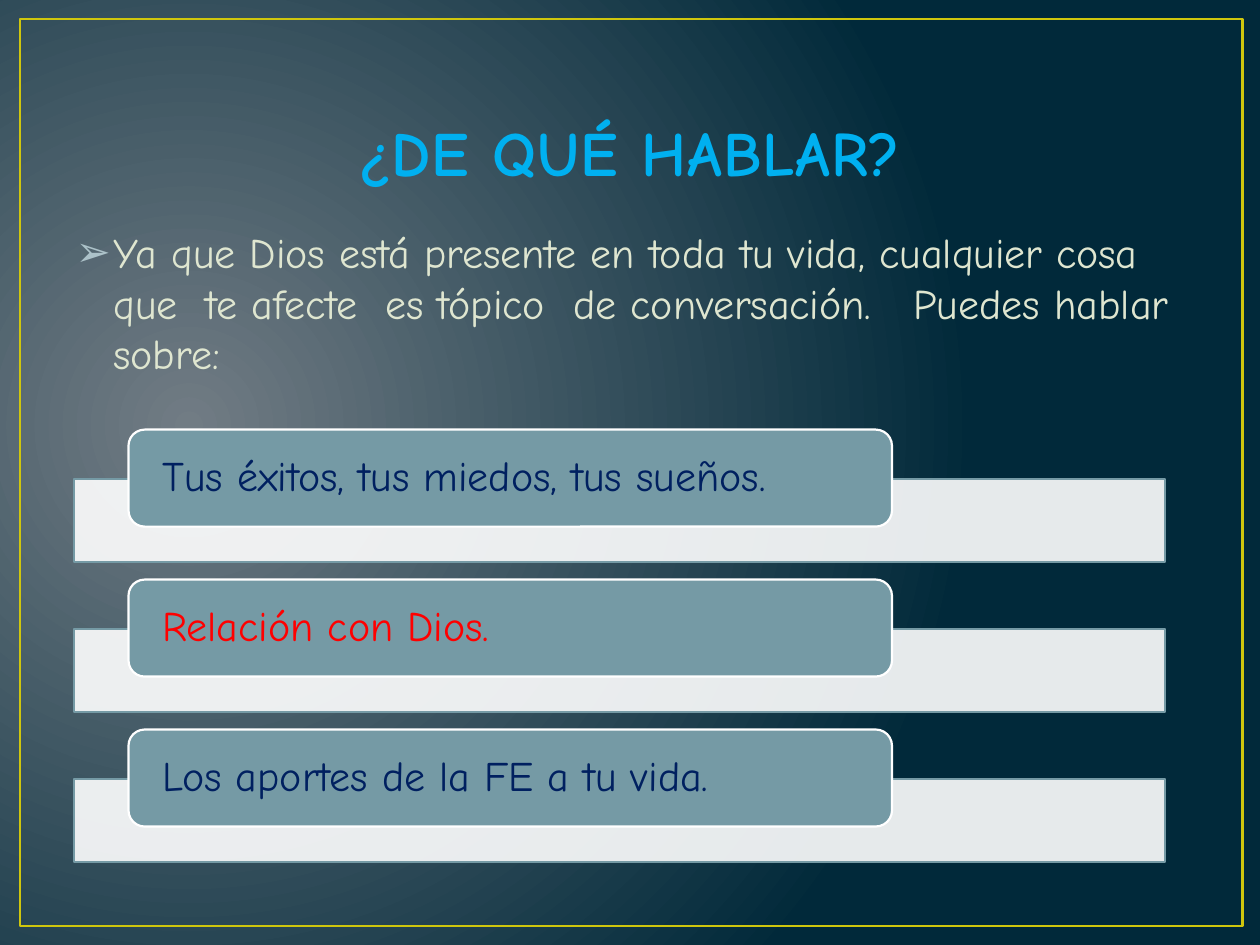
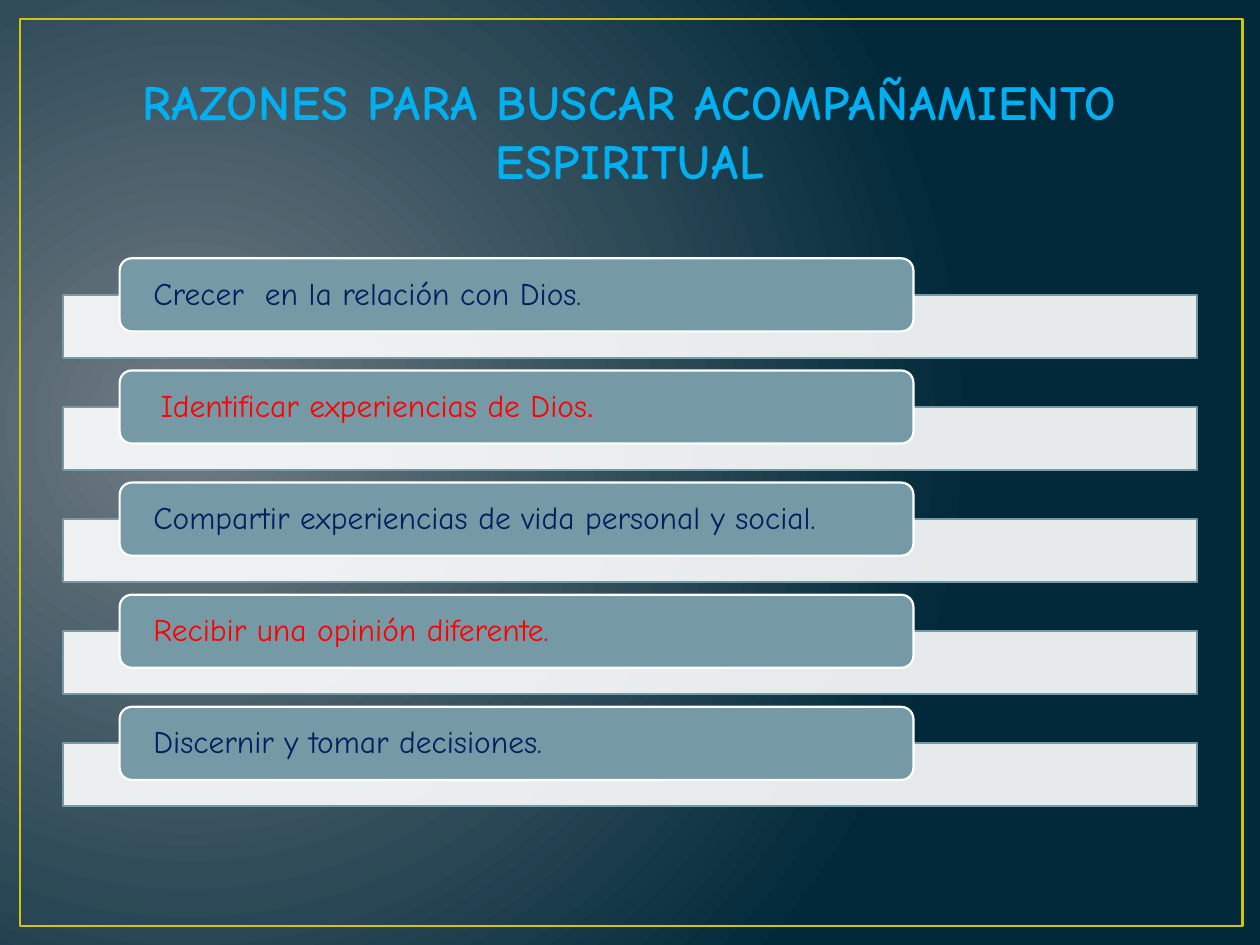
from lxml import etree
from pptx import Presentation
from pptx.dml.color import RGBColor
from pptx.enum.shapes import MSO_SHAPE
from pptx.enum.text import MSO_ANCHOR, MSO_AUTO_SIZE, PP_ALIGN
from pptx.oxml import parse_xml
from pptx.oxml.ns import nsdecls, qn
from pptx.util import Inches, Pt

RECTANGLE, ROUNDED = MSO_SHAPE.RECTANGLE, MSO_SHAPE.ROUNDED_RECTANGLE
MIDDLE, BOTTOM = MSO_ANCHOR.MIDDLE, MSO_ANCHOR.BOTTOM
LEFT, CENTER = PP_ALIGN.LEFT, PP_ALIGN.CENTER
NO_AUTOFIT = MSO_AUTO_SIZE.NONE

FONT, ALT_FONT = "Comic Neue", "Cabin"
GLOW, NIGHT, GOLD = "717C84", "01293A", "CFC60D"
SKY, TITLE_EDGE = "00B0F0", "384F55"
CREAM, BULLET = "DFE6D0", "ACC2C9"
STEEL, WHITE, NAVY, RED = "759AA5", "FFFFFF", "002060", "FF0000"

# Each topic is a list of spans: (text, font, colour).
PAGES = [
    {
        "title": "¿DE QUÉ HABLAR?", "title_size": 36,
        "intro": "Ya que Dios está presente en toda tu vida, cualquier cosa que  te afecte  "
                 "es tópico  de conversación.   Puedes hablar sobre:",
        "topics": [
            [("Tus éxitos, tus miedos, tus sueños.", FONT, NAVY)],
            [("Relación con Dios.", FONT, RED)],
            [("Los aportes de la FE a tu vida.", FONT, NAVY)],
        ],
        "list": {"top": 3.41, "pitch": 1.19, "size": 24, "inset": 0.23,
                 "tab": (1.02, 6.06, 0.77), "bar": (0.59, 8.66, 0.66), "bar_drop": 0.39},
    },
    {
        "title": "RAZONES PARA BUSCAR ACOMPAÑAMIENTO ESPIRITUAL", "title_size": 28,
        "intro": None,
        "topics": [
            [("Crecer  en la relación con Dios.", FONT, NAVY)],
            [(" ", ALT_FONT, WHITE), ("Identificar experiencias de Dios", FONT, RED),
             (".", ALT_FONT, RED)],
            [("Compartir experiencias de vida personal y social.", FONT, NAVY)],
            [("Recibir una opinión diferente.", FONT, RED)],
            [("Discernir y tomar decisiones.", FONT, NAVY)],
        ],
        "list": {"top": 2.05, "pitch": 0.89, "size": 18, "inset": 0.24,
                 "tab": (0.95, 6.3, 0.58), "bar": (0.5, 9, 0.5), "bar_drop": 0.29},
    },
]


def color(value):
    return RGBColor.from_string(value)


def place(shape, left, top, width, height):
    shape.left, shape.top = Inches(left), Inches(top)
    shape.width, shape.height = Inches(width), Inches(height)


def style_span(span, size, font, ink):
    span.font.size = Pt(size)
    span.font.name = font
    span.font.color.rgb = color(ink)


def add_panel(page, kind, box, fill, line, line_width):
    panel = page.shapes.add_shape(kind, *map(Inches, box))
    panel.shadow.inherit = False
    if fill:
        panel.fill.solid()
        panel.fill.fore_color.rgb = color(fill)
    else:
        panel.fill.background()
    panel.line.color.rgb = color(line)
    panel.line.width = Pt(line_width)
    return panel


def set_master_background(master):
    master.background.fill.gradient()
    gradient = next(master.element.iter(qn("a:gradFill")))
    glow = parse_xml(
        f'<a:gradFill {nsdecls("a")} rotWithShape="1"><a:gsLst>'
        f'<a:gs pos="0"><a:srgbClr val="{GLOW}"/></a:gs>'
        f'<a:gs pos="100000"><a:srgbClr val="{NIGHT}"/></a:gs></a:gsLst>'
        '<a:path path="circle"><a:fillToRect l="15000" t="50000" r="85000" b="60000"/>'
        '</a:path></a:gradFill>')
    gradient.getparent().replace(gradient, glow)


def move_to_master(shape, master):
    """Put the shape behind everything else on the master."""
    master.shapes.element.insert(2, shape.element)


def write_title(page, text, size):
    title = page.shapes.title
    place(title, 0.5, 0.3, 9, 1.25)
    frame = title.text_frame
    frame.text = text
    frame.word_wrap = True
    frame.auto_size = NO_AUTOFIT
    frame.vertical_anchor = BOTTOM
    para = frame.paragraphs[0]
    para.alignment = CENTER
    span = para.runs[0]
    style_span(span, size, FONT, SKY)
    span.font.bold = True
    properties = span.font._element if hasattr(span.font, "_element") else span._r.get_or_add_rPr()
    properties.set("spc", "50")
    properties.insert(0, parse_xml(
        f'<a:ln {nsdecls("a")} w="13335"><a:solidFill><a:srgbClr val="{TITLE_EDGE}"/>'
        '</a:solidFill></a:ln>'))


def write_intro(page, text):
    body = page.placeholders[1]
    place(body, 0.5, 1.75, 9, 4.95)
    frame = body.text_frame
    frame.text = text
    frame.auto_size = NO_AUTOFIT
    para = frame.paragraphs[0]
    properties = para._p.get_or_add_pPr()
    properties.set("marL", str(Inches(0.3)))
    properties.set("indent", str(-Inches(0.3)))
    bullet_color = etree.SubElement(properties, qn("a:buClr"))
    etree.SubElement(bullet_color, qn("a:srgbClr"), val=BULLET)
    etree.SubElement(properties, qn("a:buChar"), char="➢")
    para.space_before = Pt(0)
    style_span(para.runs[0], 24, FONT, CREAM)


def add_topics(page, topics, layout):
    tab_left, tab_width, tab_height = layout["tab"]
    bar_left, bar_width, bar_height = layout["bar"]
    for index, spans in enumerate(topics):
        top = layout["top"] + index * layout["pitch"]
        bar = add_panel(page, RECTANGLE,
                        (bar_left, top + layout["bar_drop"], bar_width, bar_height),
                        WHITE, STEEL, 1.25)
        bar_color = next(bar.element.spPr.iter(qn("a:srgbClr")))
        etree.SubElement(bar_color, qn("a:alpha"), val="90000")

        tab = add_panel(page, ROUNDED, (tab_left, top, tab_width, tab_height),
                        STEEL, WHITE, 1.25)
        frame = tab.text_frame
        frame.word_wrap = True
        frame.vertical_anchor = MIDDLE
        frame.margin_left = frame.margin_right = Inches(layout["inset"])
        frame.margin_top = frame.margin_bottom = 0
        para = frame.paragraphs[0]
        para.alignment = LEFT
        para.line_spacing = 0.9
        for text, font, ink in spans:
            span = para.add_run()
            span.text = text
            style_span(span, layout["size"], font, ink)


def main():
    deck = Presentation()
    deck.slide_width, deck.slide_height = Inches(10), Inches(7.5)
    master = deck.slide_master
    set_master_background(master)
    title_and_body, title_only = deck.slide_layouts[1], deck.slide_layouts[5]

    for number, content in enumerate(PAGES):
        page = deck.slides.add_slide(title_and_body if content["intro"] else title_only)
        if number == 0:
            border = add_panel(page, RECTANGLE, (0.16, 0.15, 9.7, 7.2), None, GOLD, 1.5)
            move_to_master(border, master)
        write_title(page, content["title"], content["title_size"])
        if content["intro"]:
            write_intro(page, content["intro"])
        add_topics(page, content["topics"], content["list"])
    deck.save("out.pptx")


if __name__ == "__main__":
    main()
